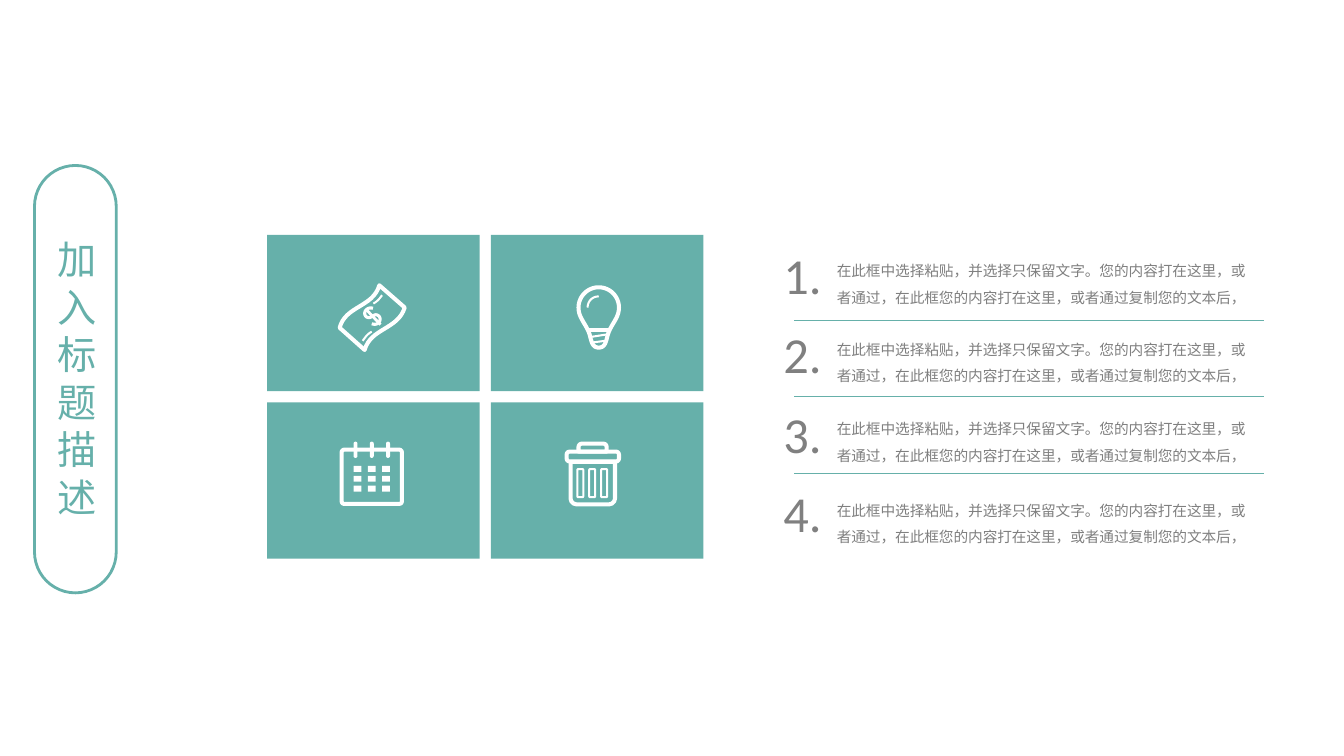
from itertools import product

from lxml.etree import SubElement
from pptx import Presentation
from pptx.dml.color import RGBColor
from pptx.enum.shapes import MSO_CONNECTOR, MSO_SHAPE
from pptx.enum.text import MSO_ANCHOR, MSO_AUTO_SIZE, PP_ALIGN
from pptx.oxml.ns import qn
from pptx.util import Cm, Pt

TEAL, WHITE, GREY = "66B0AA", "FFFFFF", "808080"
CJK = "Noto Sans CJK SC"
BOLD, FINE = 2.88, 1.44
ADVICE = "在此框中选择粘贴，并选择只保留文字。您的内容打在这里，或者通过，在此框您的内容打在这里，或者通过复制您的文本后，"


def paint(color_format, color):
    """Apply a hex colour to a fill, line or font colour."""
    color_format.rgb = RGBColor.from_string(color)


def style_text(paragraph, face, size, color):
    """Set the Latin and East Asian face, size and colour of a paragraph."""
    paragraph.font.size = Pt(size)
    paint(paragraph.font.color, color)
    paragraph.font.name = face
    properties = paragraph._p.pPr.find(qn("a:defRPr"))
    SubElement(properties, qn("a:ea")).set("typeface", face)
    return properties


def finish(shape, fill=None, line=None, weight=BOLD):
    """Give a shape a flat fill and line without a shadow."""
    shape.shadow.inherit = False
    if fill:
        shape.fill.solid()
        paint(shape.fill.fore_color, fill)
    else:
        shape.fill.background()
    if line:
        paint(shape.line.color, line)
        shape.line.width = Pt(weight)
    else:
        shape.line.fill.background()
    return shape


def block(slide, kind, box, **finishing):
    """Add a finished preset shape in a box given in centimetres."""
    return finish(slide.shapes.add_shape(kind, *map(Cm, box)), **finishing)


def rule(slide, start, end, color, weight):
    """Draw a straight line between two points in centimetres."""
    connector = slide.shapes.add_connector(
        MSO_CONNECTOR.STRAIGHT, *map(Cm, (*start, *end)))
    paint(connector.line.color, color)
    connector.line.width = Pt(weight)
    SubElement(connector._element.spPr, qn("a:effectLst"))


def bezier(p0, p1, p2, p3, steps=16):
    """List the points along a cubic curve after its start."""
    return [tuple((1 - t) ** 3 * a + 3 * t * (1 - t) ** 2 * b + 3 * t * t * (1 - t) * c + t ** 3 * d
                  for a, b, c, d in zip(p0, p1, p2, p3))
            for t in (step / steps for step in range(1, steps + 1))]


def stroke(slide, left, top, start, segments, weight=BOLD, close=False):
    """Draw a white path of curves and straight lines relative to a tile."""
    points = [start]
    for segment in segments:
        points += bezier(points[-1], *segment) if len(segment) == 3 else segment
    corners = [(Cm(left + x), Cm(top + y)) for x, y in points]
    builder = slide.shapes.build_freeform(*corners[0])
    builder.add_line_segments(corners[1:], close=close)
    finish(builder.convert_to_shape(), line=WHITE, weight=weight)


def banknote(slide, left, top):
    """Draw a waving banknote in a tile."""
    stroke(slide, left, top, (1.83, 2.34), [
        ((1.98, 1.78), (2.67, 1.83), (2.83, 1.27)), [(3.47, 1.83)],
        ((3.3, 2.39), (2.62, 2.34), (2.46, 2.9))], close=True)
    stroke(slide, left, top, (2.67, 1.85), [
        ((2.51, 1.8), (2.39, 1.98), (2.51, 2.07)),
        ((2.64, 2.13), (2.67, 1.98), (2.78, 2.02)),
        ((2.92, 2.08), (2.84, 2.31), (2.64, 2.24))], 2.2)
    stroke(slide, left, top, (2.49, 1.87), [[(2.86, 2.26)]], 2)
    stroke(slide, left, top, (2.41, 2.67), [((2.5, 2.55), (2.54, 2.49), (2.64, 2.44))], FINE)
    stroke(slide, left, top, (2.68, 1.73), [((2.79, 1.67), (2.84, 1.6), (2.9, 1.52))], FINE)


def light_bulb(slide, left, top):
    """Draw a light bulb in a tile."""
    stroke(slide, left, top, (2.21, 1.83), [
        ((2.21, 1.55), (2.44, 1.32), (2.72, 1.32)),
        ((3, 1.32), (3.23, 1.55), (3.23, 1.83)),
        ((3.23, 2.1), (3.03, 2.25), (2.95, 2.51)),
        ((2.9, 2.7), (2.88, 2.84), (2.72, 2.84)),
        ((2.56, 2.84), (2.54, 2.7), (2.49, 2.51)),
        ((2.41, 2.25), (2.21, 2.1), (2.21, 1.83))], close=True)
    rule(slide, (left + 2.46, top + 2.39), (left + 2.98, top + 2.39), WHITE, BOLD)
    stroke(slide, left, top, (2.53, 2.57), [[(2.91, 2.51)]], FINE)
    stroke(slide, left, top, (2.57, 2.71), [[(2.87, 2.67)]], FINE)
    stroke(slide, left, top, (2.44, 1.83), [((2.44, 1.67), (2.56, 1.55), (2.72, 1.55))], FINE)


def calendar(slide, left, top):
    """Draw a calendar page in a tile."""
    page = block(slide, MSO_SHAPE.ROUNDED_RECTANGLE,
                 (left + 1.88, top + 1.19, 1.52, 1.37), line=WHITE)
    page.adjustments[0] = 0.05
    for ring in range(3):
        peg = block(slide, MSO_SHAPE.ROUNDED_RECTANGLE,
                    (left + 2.18 + 0.41 * ring, top + 0.99, 0.1, 0.41), fill=WHITE)
        peg.adjustments[0] = 0.5
    for week, day in product(range(3), repeat=2):
        block(slide, MSO_SHAPE.RECTANGLE,
              (left + 2.18 + 0.36 * day, top + 1.6 + 0.25 * week, 0.2, 0.15), fill=WHITE)


def trash_can(slide, left, top):
    """Draw a trash can in a tile."""
    handle = block(slide, MSO_SHAPE.ROUND_2_SAME_RECTANGLE,
                   (left + 2.21, top + 1.04, 0.71, 0.2), line=WHITE)
    handle.adjustments[0] = 0.4
    lid = block(slide, MSO_SHAPE.ROUNDED_RECTANGLE,
                (left + 1.91, top + 1.24, 1.32, 0.25), line=WHITE)
    lid.adjustments[0] = 0.3
    bin_body = block(slide, MSO_SHAPE.ROUND_2_SAME_RECTANGLE,
                     (left + 2.01, top + 1.5, 1.12, 1.07), line=WHITE)
    bin_body.adjustments[0], bin_body.adjustments[1] = 0, 0.14
    for slot in range(3):
        rib = block(slide, MSO_SHAPE.ROUNDED_RECTANGLE,
                    (left + 2.18 + 0.3 * slot, top + 1.68, 0.15, 0.71),
                    line=WHITE, weight=FINE)
        rib.adjustments[0] = 0.16


def title_pill(slide, left, top, width, height):
    """Place the vertical title in its rounded frame."""
    pill = block(slide, MSO_SHAPE.ROUNDED_RECTANGLE,
                 (left, top, width, height), line=TEAL, weight=2)
    pill.adjustments[0] = 0.5
    title = slide.shapes.title
    title.left, title.top = Cm(left + 0.18), Cm(top + 1.75)
    title.width, title.height = Cm(width - 0.36), Cm(7.52)
    frame = title.text_frame
    frame.text = "加入标题描述"
    frame.auto_size = MSO_AUTO_SIZE.NONE
    frame.vertical_anchor = MSO_ANCHOR.TOP
    frame._txBody.bodyPr.set("vert", "eaVert")
    heading = frame.paragraphs[0]
    heading.alignment = PP_ALIGN.CENTER
    style_text(heading, CJK, 28, TEAL).set("spc", "600")


def icon_grid(slide, left, top, width, height, gap=0.28):
    """Lay out four tiles, each with its icon."""
    tile_width, tile_height = (width - gap) / 2, (height - gap) / 2
    icons = (banknote, light_bulb, calendar, trash_can)
    for (row, column), icon in zip(product(range(2), repeat=2), icons):
        x, y = left + column * (tile_width + gap), top + row * (tile_height + gap)
        block(slide, MSO_SHAPE.RECTANGLE, (x, y, tile_width, tile_height), fill=TEAL)
        icon(slide, x, y)


def passage(slide, box, wording, face, size, spacing):
    """Add one grey wrapped text box."""
    frame = slide.shapes.add_textbox(*map(Cm, box)).text_frame
    frame.word_wrap = True
    frame.margin_left = frame.margin_right = Cm(0.13)
    frame.margin_top = frame.margin_bottom = Cm(0.08)
    frame.text = wording
    frame.paragraphs[0].line_spacing = spacing
    style_text(frame.paragraphs[0], face, size, GREY)


def numbered_list(slide, left, top, width):
    """Stack the numbered passages with rules between them."""
    for index, drop in enumerate((0.23, 0.21, 0.22, 0.27)):
        y = top + 2 * index
        passage(slide, (left, y, 1.55, 1.68), f"{index + 1}.", "Calibri", 36, 1.0)
        passage(slide, (left + 1.35, y + drop, width - 1.35, 1.4), ADVICE, CJK, 10.5, 1.5)
    for divider in range(3):
        y = top + 2.01 + 1.92 * divider
        rule(slide, (left + 0.41, y), (left + width, y), TEAL, 0.75)


def main():
    """Build and save the slide."""
    deck = Presentation()
    deck.slide_width, deck.slide_height = Cm(33.87), Cm(19.05)
    slide = deck.slides.add_slide(deck.slide_layouts[5])
    title_pill(slide, 0.87, 4.17, 2.06, 10.77)
    icon_grid(slide, 6.73, 5.92, 11, 8.16)
    numbered_list(slide, 19.61, 6.07, 12.25)
    deck.save("out.pptx")


if __name__ == "__main__":
    main()
